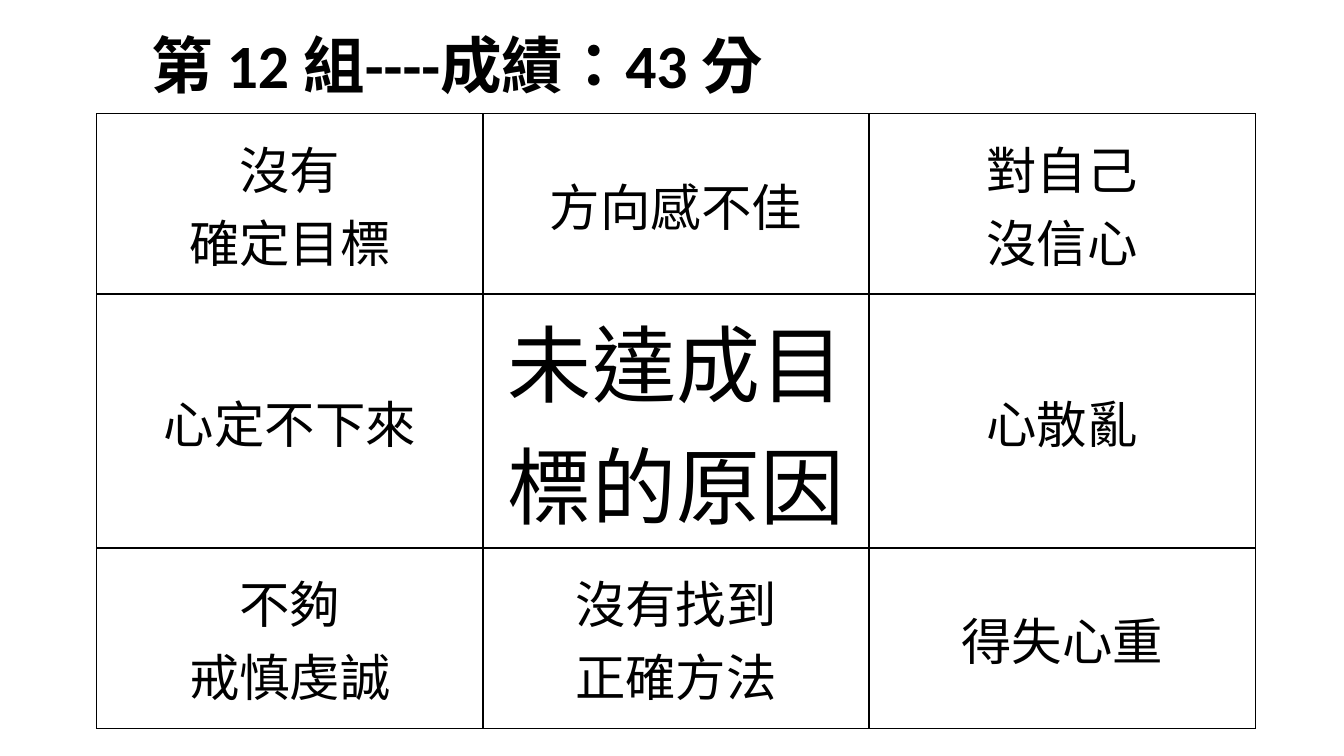
from dataclasses import dataclass

from lxml import etree
from pptx import Presentation
from pptx.dml.color import RGBColor
from pptx.enum.lang import MSO_LANGUAGE_ID
from pptx.enum.text import MSO_ANCHOR, PP_ALIGN
from pptx.oxml.ns import qn
from pptx.util import Cm, Pt

LEFT, CENTER = PP_ALIGN.LEFT, PP_ALIGN.CENTER
MIDDLE = MSO_ANCHOR.MIDDLE
CHINESE = MSO_LANGUAGE_ID.TRADITIONAL_CHINESE

# Content: one list of lines per cell
TITLE = "第 12 組----成績：43 分"
REASONS = [
    [["沒有", "確定目標"], ["方向感不佳"], ["對自己", "沒信心"]],
    [["心定不下來"], ["未達成目標的原因"], ["心散亂"]],
    [["不夠", "戒慎虔誠"], ["沒有找到", "正確方法"], ["得失心重"]],
]
ROW_HEIGHTS = [Cm(4.54), Cm(6.4), Cm(4.54)]
COL_WIDTH = Cm(9.73)
CENTRAL = (1, 1)


@dataclass(frozen=True)
class Theme:
    font: str = "Calibri"
    ink: str = "000000"
    title: int = 44
    reason: int = 36
    central: int = 60
    border: int = 1


THEME = Theme()


def write(tf, lines, size, bold=False, align=CENTER, spacing=None):
    tf.word_wrap = True
    for i, line in enumerate(lines):
        p = tf.paragraphs[0] if i == 0 else tf.add_paragraph()
        p.alignment = align
        if spacing:
            p.line_spacing = spacing
        r = p.add_run()
        r.text = line
        r.font.name = THEME.font
        r.font.size = Pt(size)
        r.font.bold = bold
        r.font.language_id = CHINESE
        r.font.color.rgb = RGBColor.from_string(THEME.ink)


def add_borders(cell):
    tc_pr = cell._tc.get_or_add_tcPr()
    for i, side in enumerate(("lnL", "lnR", "lnT", "lnB")):
        ln = etree.Element(qn(f"a:{side}"), w=str(Pt(THEME.border)))
        fill = etree.SubElement(ln, qn("a:solidFill"))
        etree.SubElement(fill, qn("a:srgbClr"), val=THEME.ink)
        tc_pr.insert(i, ln)


prs = Presentation()
prs.slide_width, prs.slide_height = Cm(33.87), Cm(19.05)
slide = prs.slides.add_slide(prs.slide_layouts[6])

# Title
box = slide.shapes.add_textbox(Cm(3.56), Cm(-0.1), Cm(26.5), Cm(3.68))
write(box.text_frame, [TITLE], THEME.title, bold=True, align=LEFT, spacing=0.9)
box.text_frame.vertical_anchor = MIDDLE

# Nine-cell grid
rows, cols = len(REASONS), len(REASONS[0])
table = slide.shapes.add_table(rows, cols, Cm(2.44), Cm(2.87),
                               COL_WIDTH * cols, sum(ROW_HEIGHTS)).table
table.first_row = table.horz_banding = False
for col in table.columns:
    col.width = COL_WIDTH
for r, (height, row) in enumerate(zip(ROW_HEIGHTS, REASONS)):
    table.rows[r].height = height
    for c, lines in enumerate(row):
        cell = table.cell(r, c)
        cell.fill.background()
        cell.vertical_anchor = MIDDLE
        size = THEME.central if (r, c) == CENTRAL else THEME.reason
        write(cell.text_frame, lines, size)
        add_borders(cell)

prs.save("out.pptx")
